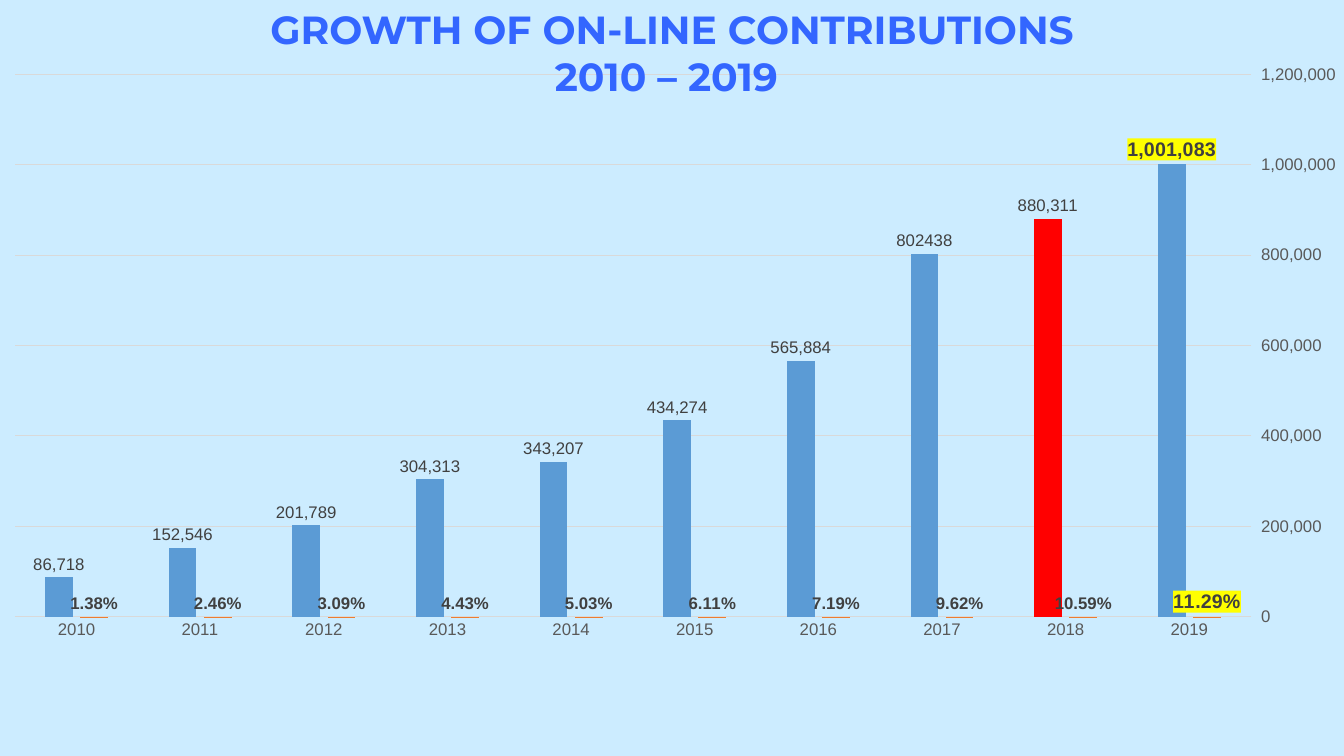
"""Slide with a column chart of on-line contributions, 2010 to 2019."""
from lxml import etree
from pptx import Presentation
from pptx.chart.data import CategoryChartData
from pptx.dml.color import RGBColor
from pptx.enum import chart as ch, text
from pptx.oxml import parse_xml
from pptx.oxml.ns import nsdecls, qn
from pptx.util import Inches, Pt

TITLE = ["GROWTH OF ON-LINE CONTRIBUTIONS", "2010 – 2019 "]
YEARS = [str(year) for year in range(2010, 2020)]
AMOUNTS = [86718, 152546, 201789, 304313, 343207, 434274, 565884, 802438, 880311, 1001083]
SHARES = [0.0138, 0.0246, 0.0309, 0.0443, 0.0503, 0.0611, 0.0719, 0.0962, 0.1059, 0.1129]
SERIES = [
    ("Series 1", AMOUNTS, "#,##0", "amount", False),
    ("Series 2", SHARES, "0.00%", "share", True),
]
PLAIN_LABEL = (7, "802438")
RED_YEAR, LAST_YEAR = 8, 9
PLOT = {"x": 0.011, "y": 0.016, "w": 0.92, "h": 0.869}
THEME = {
    "bg": "CCECFF", "title": "3366FF", "amount": "5B9BD5", "share": "ED7D31",
    "red": "FF0000", "mark": "FFFF00", "axis": "595959", "label": "404040", "grid": "D9D9D9",
    "title_font": "Montserrat", "font": "Arial",
    "title_size": 28, "size": 12, "mark_size": 14, "line": 0.75, "kern": "1200",
}


def rgb(name):
    return RGBColor.from_string(THEME[name])


def style(font, color, size="size", bold=False, face="font"):
    font.name, font.size, font.bold = THEME[face], Pt(THEME[size]), bold
    font.color.rgb = rgb(color)
    font._element.set("kern", THEME["kern"])


def rule(line):
    line.color.rgb = rgb("grid")
    line.width = Pt(THEME["line"])


def set_plot_area(chart):
    area = chart._chartSpace.chart.plotArea
    for old in area.findall(qn("c:layout")):
        area.remove(old)
    layout = parse_xml(f"<c:layout {nsdecls('c')}><c:manualLayout/></c:layout>")
    parts = [("layoutTarget", "inner"), ("xMode", "edge"), ("yMode", "edge"), *PLOT.items()]
    for tag, val in parts:
        etree.SubElement(layout[0], qn(f"c:{tag}")).set("val", str(val))
    area.insert(0, layout)


def mark_label(series, fmt):
    label = series.points[LAST_YEAR].data_label
    style(label.font, "label", "mark_size", True)
    label.position = ch.XL_LABEL_POSITION.OUTSIDE_END
    txpr = next(label.font._element.iterancestors(qn("c:txPr")))
    txpr.addprevious(parse_xml(f'<c:numFmt {nsdecls("c")} formatCode="{fmt}" sourceLinked="0"/>'))
    txpr.addprevious(parse_xml(
        f'<c:spPr {nsdecls("c", "a")}><a:solidFill><a:srgbClr val="{THEME["mark"]}"/>'
        "</a:solidFill></c:spPr>"))


def add_growth_chart(s):
    data = CategoryChartData()
    data.categories = YEARS
    for name, values, fmt, _, _ in SERIES:
        data.add_series(name, values, fmt)
    chart = s.shapes.add_chart(ch.XL_CHART_TYPE.COLUMN_CLUSTERED, 0, Inches(0.64),
                               Inches(13.33), Inches(6.19), data).chart
    chart.has_legend = chart.has_title = False
    style(chart.font, "axis")
    set_plot_area(chart)

    cat, val = chart.category_axis, chart.value_axis
    for axis in (cat, val):
        axis.major_tick_mark = axis.minor_tick_mark = ch.XL_TICK_MARK.NONE
        style(axis.tick_labels.font, "axis")
    rule(cat.format.line)
    val.tick_label_position = ch.XL_TICK_LABEL_POSITION.HIGH
    val.minimum_scale, val.maximum_scale, val.major_unit = 0, 1200000, 200000
    val.format.line.fill.background()
    rule(val.major_gridlines.format.line)
    val.tick_labels.number_format = "#,##0"
    val.tick_labels.number_format_is_linked = False

    plot = chart.plots[0]
    plot.gap_width, plot.overlap, plot.vary_by_categories = 219, -27, False
    for series, (_, _, fmt, color, bold) in zip(plot.series, SERIES):
        series.format.fill.solid()
        series.format.fill.fore_color.rgb = rgb(color)
        labels = series.data_labels
        labels.show_value = True
        labels.number_format, labels.number_format_is_linked = fmt, False
        labels.position = ch.XL_LABEL_POSITION.OUTSIDE_END
        style(labels.font, "label", bold=bold)
        mark_label(series, fmt)

    amounts = plot.series[0]
    red = amounts.points[RED_YEAR].format.fill
    red.solid()
    red.fore_color.rgb = rgb("red")
    idx, wording = PLAIN_LABEL
    label = amounts.points[idx].data_label
    label.text_frame.text = wording
    style(label.text_frame.paragraphs[0].runs[0].font, "label")
    label.position = ch.XL_LABEL_POSITION.OUTSIDE_END


def add_title(s):
    tf = s.shapes.add_textbox(0, 0, Inches(13.33), Inches(1.04)).text_frame
    tf.word_wrap = True
    tf.text = "\n".join(TITLE)
    for p in tf.paragraphs:
        p.alignment = text.PP_ALIGN.CENTER
        style(p.runs[0].font, "title", "title_size", True, "title_font")


def main():
    prs = Presentation()
    prs.slide_width, prs.slide_height = Inches(13.33), Inches(7.5)
    s = prs.slides.add_slide(prs.slide_layouts[6])
    s.background.fill.solid()
    s.background.fill.fore_color.rgb = rgb("bg")
    add_growth_chart(s)
    add_title(s)
    prs.save("out.pptx")


if __name__ == "__main__":
    main()
